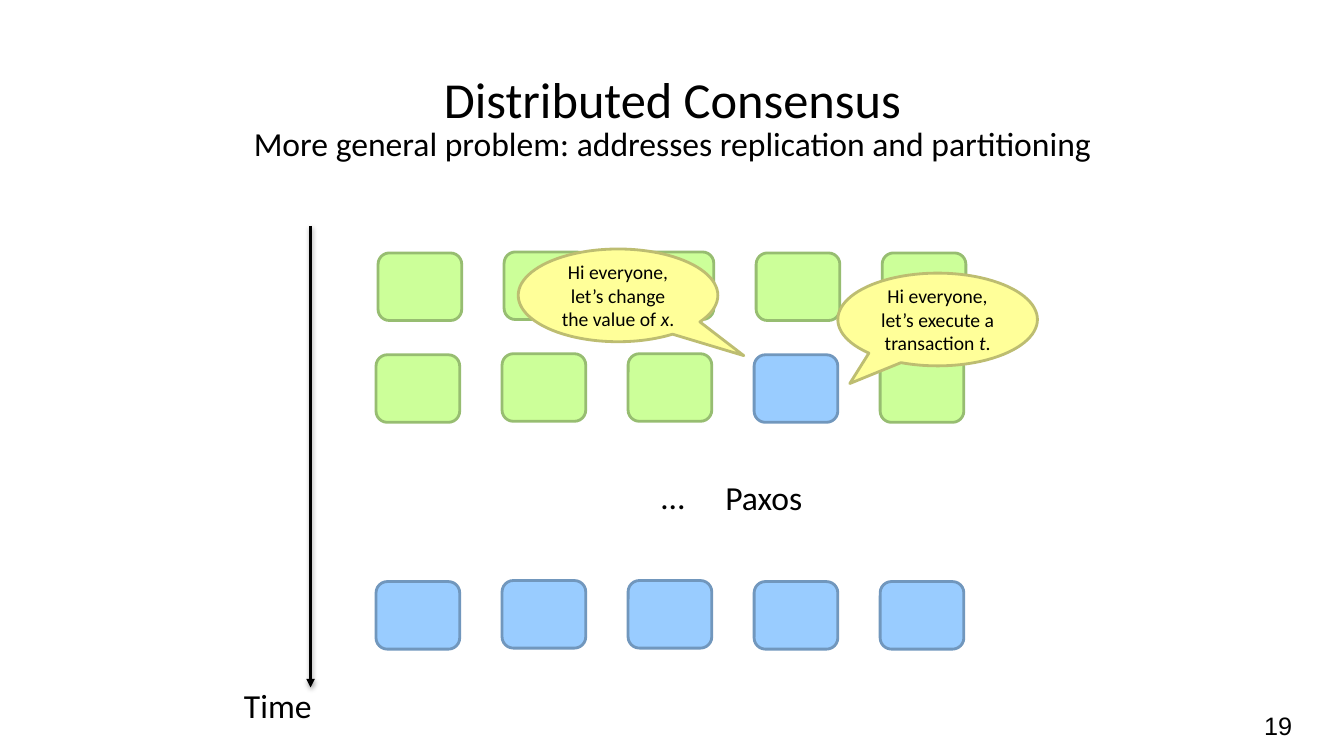
from dataclasses import dataclass

from lxml.etree import SubElement
from pptx import Presentation
from pptx.dml.color import RGBColor
from pptx.enum.shapes import MSO_CONNECTOR, MSO_SHAPE
from pptx.enum.text import MSO_ANCHOR, PP_ALIGN
from pptx.oxml.ns import qn
from pptx.util import Inches, Pt


@dataclass(frozen=True)
class Theme:
    black: str = "000000"
    green: tuple = ("CCFF99", "97BD71")
    blue: tuple = ("99CCFF", "7197BD")
    yellow: tuple = ("FFFF99", "BDBD71")
    font: str = "Calibri"
    number_font: str = "Arial"
    title_size: int = 36
    label_size: int = 24
    number_size: int = 18
    callout_size: int = 14
    line_width: int = 2


THEME = Theme()


def format_paragraph(para, size, font=THEME.font, align=PP_ALIGN.CENTER):
    para.alignment = align
    for span in para.runs:
        span.font.size = Pt(size)
        span.font.name = font
        span.font.color.rgb = RGBColor.from_string(THEME.black)


def place_title(slide, text):
    title = slide.shapes.title
    title.left, title.top = Inches(1.67), Inches(0.6)
    title.width, title.height = Inches(10), Inches(0.75)
    frame = title.text_frame
    frame.text = text
    frame.vertical_anchor = MSO_ANCHOR.MIDDLE
    format_paragraph(frame.paragraphs[0], THEME.title_size)


def add_label(slide, text, left, top, width, height=0.5, size=THEME.label_size, **style):
    box = slide.shapes.add_textbox(Inches(left), Inches(top), Inches(width), Inches(height))
    frame = box.text_frame
    frame.word_wrap = True
    frame.text = text
    format_paragraph(frame.paragraphs[0], size, **style)


def add_filled_shape(shapes, kind, left, top, width, height, colors):
    shape = shapes.add_shape(kind, Inches(left), Inches(top), Inches(width), Inches(height))
    fill, line = colors
    shape.shadow.inherit = False
    shape.fill.solid()
    shape.fill.fore_color.rgb = RGBColor.from_string(fill)
    shape.line.color.rgb = RGBColor.from_string(line)
    shape.line.width = Pt(THEME.line_width)
    return shape


def add_server_row(slide, left, top, colors):
    row = slide.shapes.add_group_shape()
    for column, pair in enumerate(colors):
        server_top = top if column in (1, 2) else top + 0.01
        add_filled_shape(row.shapes, MSO_SHAPE.ROUNDED_RECTANGLE,
                         left + 1.25 * column, server_top, 0.83, 0.67, pair)


def add_callout(slide, left, top, tip, message, variable):
    callout = add_filled_shape(slide.shapes, MSO_SHAPE.OVAL_CALLOUT,
                               left, top, 1.98, 0.92, THEME.yellow)
    callout.adjustments[0], callout.adjustments[1] = tip
    frame = callout.text_frame
    frame.word_wrap = True
    frame.vertical_anchor = MSO_ANCHOR.MIDDLE
    para = frame.paragraphs[0]
    for text, italic in ((message, False), (variable, True), (".", False)):
        span = para.add_run()
        span.text = text
        span.font.italic = italic
    format_paragraph(para, THEME.callout_size)


def add_time_arrow(slide, left, top, bottom):
    arrow = slide.shapes.add_connector(MSO_CONNECTOR.STRAIGHT, Inches(left), Inches(top),
                                       Inches(left), Inches(bottom))
    arrow.line.color.rgb = RGBColor.from_string(THEME.black)
    arrow.line.width = Pt(THEME.line_width)
    SubElement(arrow.line._get_or_add_ln(), qn("a:tailEnd"), type="triangle")
    effects = SubElement(arrow._element.spPr, qn("a:effectLst"))
    shadow = SubElement(effects, qn("a:outerShdw"), blurRad=str(Pt(3.1)),
                        dist=str(Pt(1.6)), dir="5400000", rotWithShape="0")
    color = SubElement(shadow, qn("a:srgbClr"), val=THEME.black)
    SubElement(color, qn("a:alpha"), val="38000")


def main():
    deck = Presentation()
    deck.slide_width, deck.slide_height = Inches(13.33), Inches(7.5)
    slide = deck.slides.add_slide(deck.slide_layouts.get_by_name("Title Only"))

    place_title(slide, "Distributed Consensus")
    add_label(slide, "More general problem: addresses replication and partitioning",
              1.67, 1.17, 10)

    green, blue = THEME.green, THEME.blue
    add_server_row(slide, 3.75, 2.5, [green] * 5)
    add_time_arrow(slide, 3.08, 2.24, 6.82)
    add_server_row(slide, 3.73, 3.51, [green, green, green, blue, green])
    add_server_row(slide, 3.73, 5.76, [blue] * 5)

    for text, left, top in (("Time", 2.08, 6.75), ("…", 6, 4.67), ("Paxos", 6.9, 4.68)):
        add_label(slide, text, left, top, 1.35)

    add_callout(slide, 5.14, 2.47, (0.63, 0.65),
                "Hi everyone, let’s change the value of ", "x")
    add_callout(slide, 8.31, 2.71, (-0.44, 0.69),
                "Hi everyone, let’s execute a transaction ", "t")
    add_label(slide, "19", 12.44, 7, 0.78, 0.4, THEME.number_size,
              font=THEME.number_font, align=PP_ALIGN.LEFT)

    deck.save("out.pptx")


if __name__ == "__main__":
    main()
